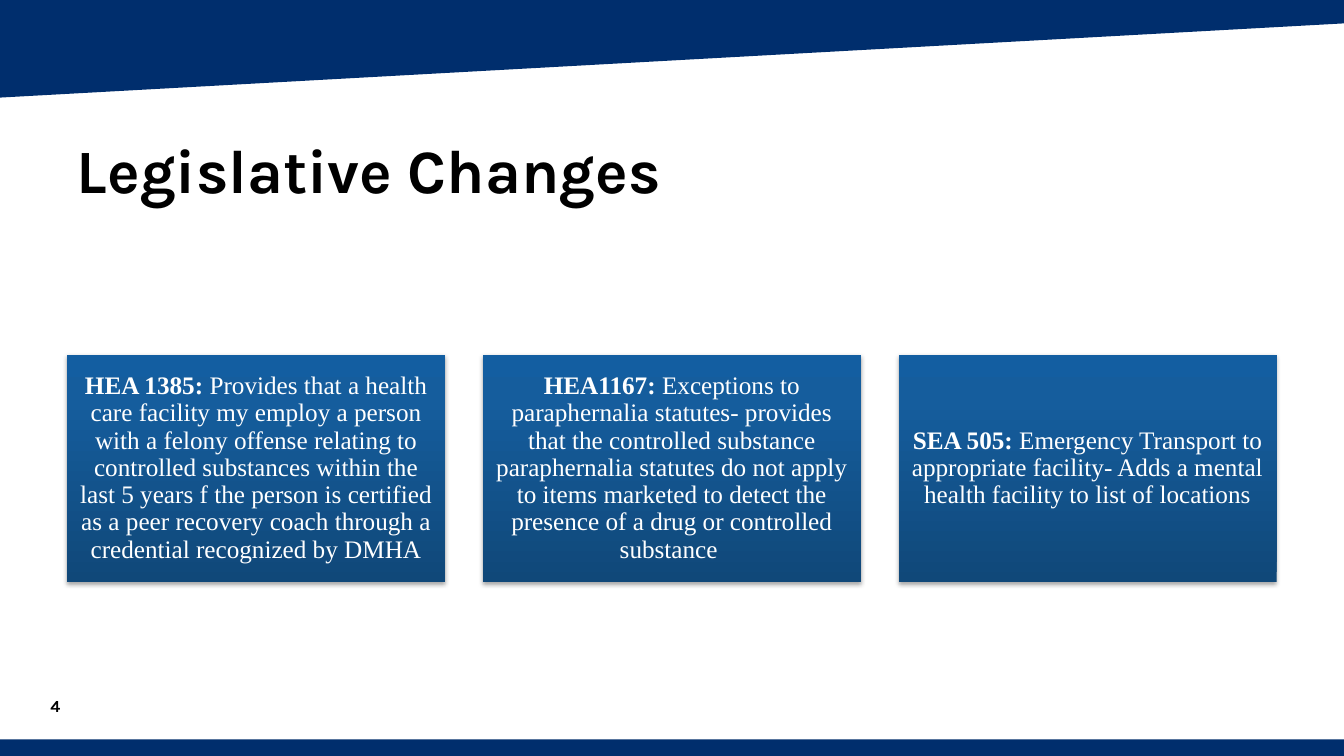
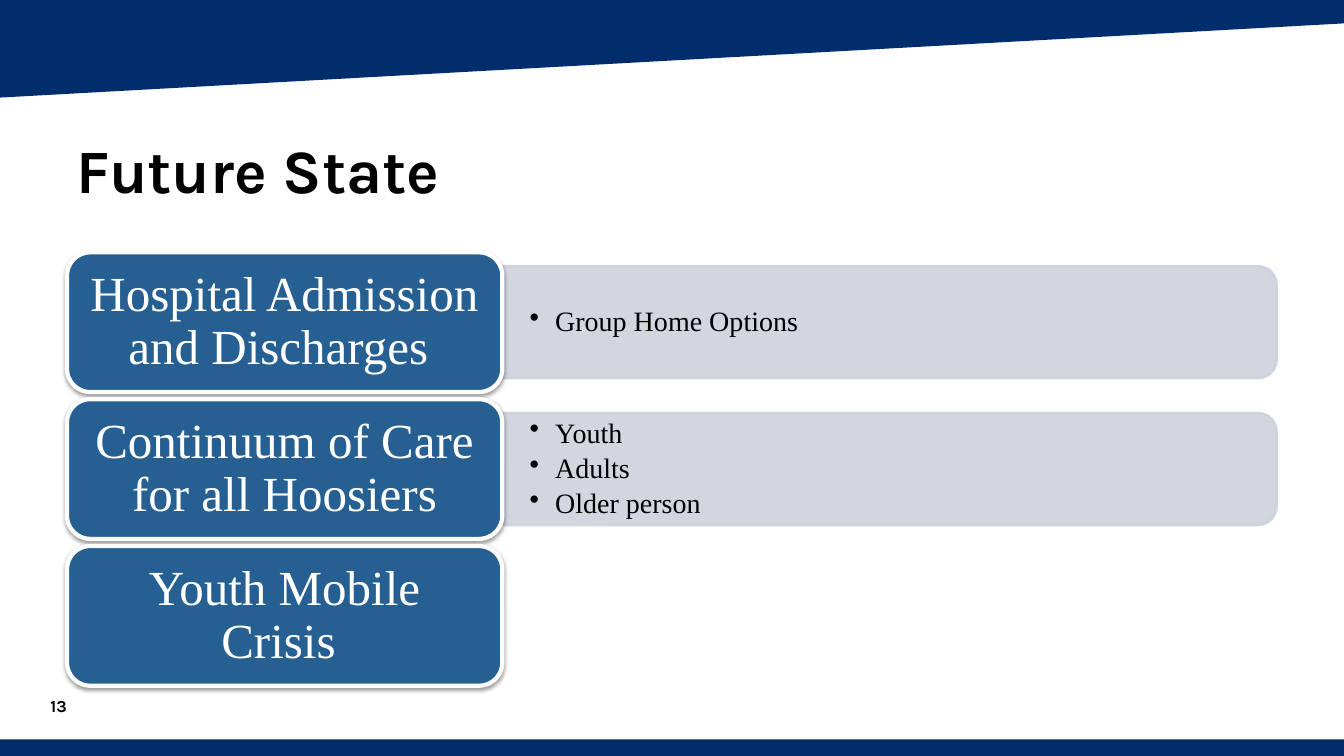
from lxml import etree
from pptx import Presentation
from pptx.dml.color import RGBColor
from pptx.enum.shapes import MSO_SHAPE
from pptx.enum.text import MSO_ANCHOR, PP_ALIGN
from pptx.oxml.ns import qn
from pptx.util import Cm, Pt

# Shared look
WIDE, HIGH = 33.87, 19.05
NAVY, BLUE, GREY = "002E6D", "265F92", "CDD2DC"
WHITE, BLACK = "FFFFFF", "000000"
FADE = [(0, "104879"), (80, "155D9D"), (100, "135EA1")]
HEAD, BODY = "Karla", "Times New Roman"
LEFT = 1.69


def color(code):
    return RGBColor.from_string(code)


def node(owner, tag, **attrs):
    """Add a child element with the given attributes."""
    return etree.SubElement(owner, qn(tag), {k: str(v) for k, v in attrs.items()})


def write(frame, text, lead="", font=BODY, size=18, ink=BLACK, bold=False,
          align=PP_ALIGN.LEFT, pad=(0.25, 0.13), line=None, gap=None,
          bullet=False):
    """Fill a frame, one paragraph to each line, after an optional bold lead."""
    frame.word_wrap = True
    frame.vertical_anchor = MSO_ANCHOR.MIDDLE
    frame.margin_left = frame.margin_right = Cm(pad[0])
    frame.margin_top = frame.margin_bottom = Cm(pad[1])
    for n, words in enumerate(text.split("\n")):
        para = frame.add_paragraph() if n else frame.paragraphs[0]
        if bullet:
            props = para._p.get_or_add_pPr()
            props.set("marL", str(Cm(0.64)))
            props.set("indent", str(Cm(-0.64)))
            node(props, "a:buChar", char="•")
        para.alignment = align
        para.line_spacing = line
        if gap and n:
            para.space_before = Pt(gap)
        for part, heavy in ((lead, True), (words, bold)):
            if part:
                run = para.add_run()
                run.text = part
                run.font.name, run.font.size = font, Pt(size)
                run.font.bold = heavy
                run.font.color.rgb = color(ink)


def label(slide, box, text, **style):
    area = slide.shapes.add_textbox(*map(Cm, box))
    write(area.text_frame, text, **style)


def paint(shape, fill=None, edge=None, width=1):
    """Set plain fill and outline, and drop the theme shadow."""
    shape.shadow.inherit = False
    if fill:
        shape.fill.solid()
        shape.fill.fore_color.rgb = color(fill)
    if edge:
        shape.line.color.rgb = color(edge)
        shape.line.width = Pt(width)
    else:
        shape.line.fill.background()


def block(slide, kind, box, **look):
    shape = slide.shapes.add_shape(kind, *map(Cm, box))
    paint(shape, **look)
    return shape


def shade(shape, alpha, drop):
    """Cast a soft shadow straight down."""
    effects = shape._element.spPr.find(qn("a:effectLst"))
    cast = node(effects, "a:outerShdw", blurRad=Pt(3.1), dist=Pt(drop),
                dir=5400000, algn="ctr", rotWithShape=0)
    node(node(cast, "a:srgbClr", val=BLACK), "a:alpha", val=alpha * 1000)


def blend(shape, stops):
    """Fill with colour stops that run from bottom to top."""
    shape.fill.gradient()
    shape.fill.gradient_angle = 90
    ramp = shape._element.spPr.find(".//" + qn("a:gsLst"))
    for old in list(ramp):
        ramp.remove(old)
    for spot, code in stops:
        node(node(ramp, "a:gs", pos=spot * 1000), "a:srgbClr", val=code)


def clear(shape, alpha):
    """Make fill and outline partly transparent."""
    for tint in shape._element.spPr.iter(qn("a:srgbClr")):
        node(tint, "a:alpha", val=alpha * 1000)


def page(deck, title, number):
    """Start a slide with bands, title and page number."""
    slide = deck.slides.add_slide(deck.slide_layouts[6])
    block(slide, MSO_SHAPE.RECTANGLE, (0, 18.63, WIDE, 0.42), fill=NAVY)
    path = slide.shapes.build_freeform(0, Cm(2.46))
    path.add_line_segments([(Cm(WIDE), Cm(0.59)), (Cm(WIDE), 0), (0, 0)])
    paint(path.convert_to_shape(), fill=NAVY)
    label(slide, (LEFT, 2.67, 23.14, 3.18), title,
          font=HEAD, size=44, bold=True)
    label(slide, (1.02, 17.27, 7.62, 1.02), number,
          font=HEAD, size=12, bold=True)
    return slide


def cards(slide, box, items, gap=0.95):
    """Spread equal gradient cards across the box."""
    left, top, width, height = box
    wide = (width - gap * (len(items) - 1)) / len(items)
    for n, (lead, text) in enumerate(items):
        card = block(slide, MSO_SHAPE.RECTANGLE,
                     (left + n * (wide + gap), top, wide, height))
        blend(card, FADE)
        shade(card, 35, 1.8)
        write(card.text_frame, text, lead=lead, ink=WHITE,
              align=PP_ALIGN.CENTER, pad=(0.18, 0.18), line=0.9)


def strip(slide, box, text):
    """Draw a bar rounded on its right, with bullets on top."""
    left, top, width, height = box
    shift = (width - height) / 2
    bar = block(slide, MSO_SHAPE.ROUND_2_SAME_RECTANGLE,
                (left + shift, top - shift, height, width),
                fill=GREY, edge=GREY, width=2)
    bar.rotation = 90
    clear(bar, 90)
    label(slide, box, text, size=20, pad=(0.69, 0.2), line=0.9,
          gap=3.5, bullet=True)


def rows(slide, box, items, gap=0.18, split=10.97):
    """Stack topic boxes, each with an optional bar of details."""
    left, top, width, height = box
    tall = (height - gap * (len(items) - 1)) / len(items)
    for n, (topic, text) in enumerate(items):
        y = top + n * (tall + gap)
        if text:
            strip(slide, (left + split, y + tall * 0.1,
                          width - split, tall * 0.8), text)
        tile = block(slide, MSO_SHAPE.ROUNDED_RECTANGLE,
                     (left, y, split, tall), fill=BLUE, edge=WHITE, width=3)
        shade(tile, 38, 1.6)
        write(tile.text_frame, topic, size=35, ink=WHITE,
              align=PP_ALIGN.CENTER, pad=(0.38, 0.18), line=0.9)


LAWS = [
    ("HEA 1385: ", "Provides that a health care facility my employ a person "
     "with a felony offense relating to controlled substances within the last "
     "5 years f the person is certified as a peer recovery coach through a "
     "credential recognized by DMHA"),
    ("HEA1167:", " Exceptions to paraphernalia statutes- provides that the "
     "controlled substance paraphernalia statutes do not apply to items "
     "marketed to detect the presence of a drug or controlled substance "),
    ("SEA 505: ", "Emergency Transport to appropriate facility- Adds a mental "
     "health facility to list of locations"),
]
GOALS = [
    ("Hospital Admission and Discharges ", "Group Home Options"),
    ("Continuum of Care for all Hoosiers", "Youth\nAdults\nOlder person"),
    ("Youth Mobile Crisis ", ""),
]


def main():
    deck = Presentation()
    deck.slide_width, deck.slide_height = Cm(WIDE), Cm(HIGH)
    cards(page(deck, "Legislative Changes", "4"),
          (LEFT, 8.94, 30.48, 5.72), LAWS)
    rows(page(deck, "Future State", "13"),
         (LEFT, 6.36, 30.48, 10.92), GOALS)
    deck.save("out.pptx")


if __name__ == "__main__":
    main()
